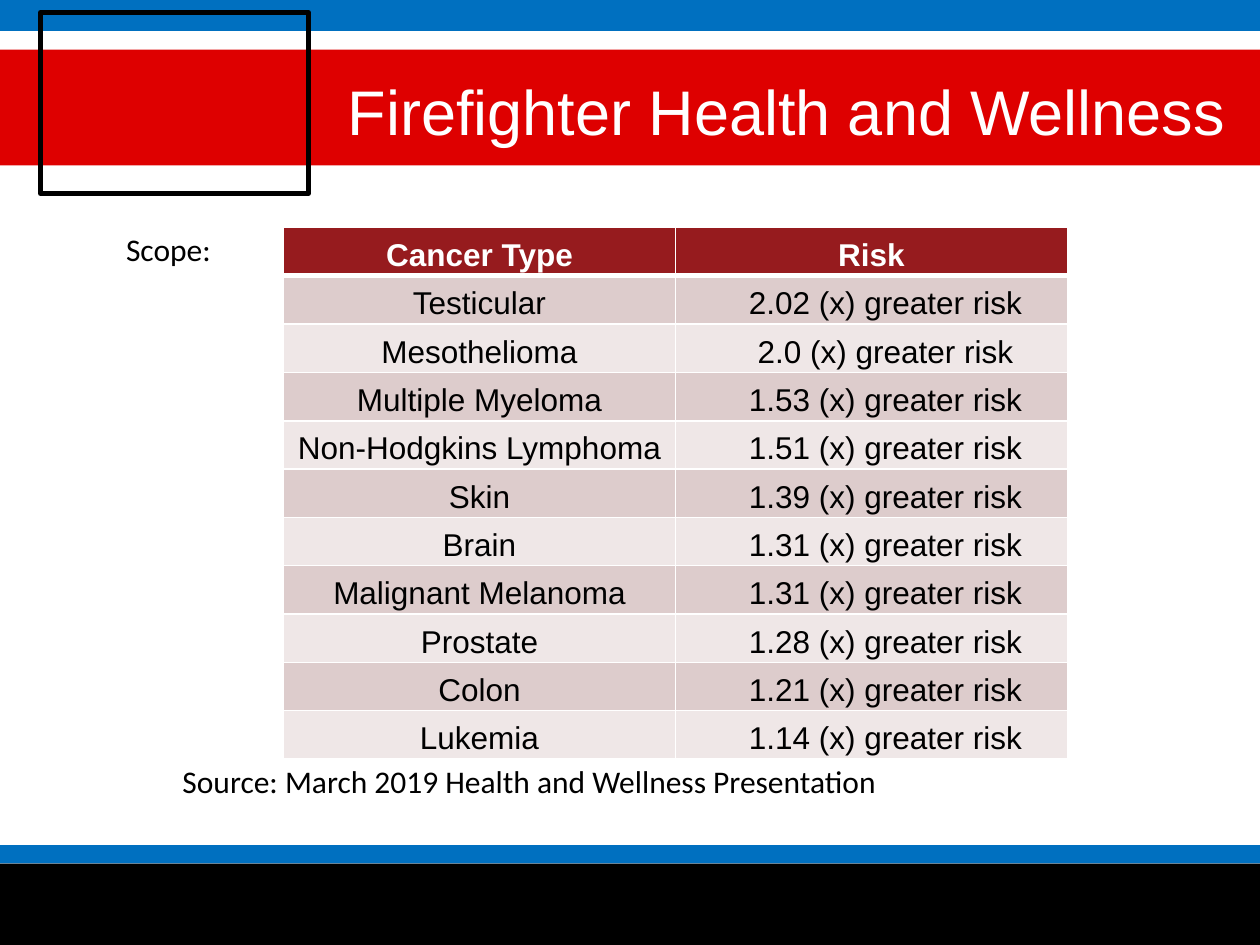
from lxml import etree
from pptx import Presentation
from pptx.dml.color import RGBColor
from pptx.enum.shapes import MSO_SHAPE
from pptx.enum.text import MSO_ANCHOR, PP_ALIGN
from pptx.oxml.ns import qn
from pptx.util import Pt

RECTANGLE = MSO_SHAPE.RECTANGLE
TOP = MSO_ANCHOR.TOP
LEFT = PP_ALIGN.LEFT
CENTER = PP_ALIGN.CENTER

SLIDE_WIDTH, SLIDE_HEIGHT = 720, 540
COLORS = {
    "red": "DE0000",
    "blue": "0070C0",
    "black": "000000",
    "white": "FFFFFF",
    "header": "961B1E",
    "odd_row": "DDCCCC",
    "even_row": "EFE7E7",
}
RISKS = [
    ("Testicular", "2.02"),
    ("Mesothelioma", "2.0"),
    ("Multiple Myeloma", "1.53"),
    ("Non-Hodgkins Lymphoma", "1.51"),
    ("Skin", "1.39"),
    ("Brain", "1.31"),
    ("Malignant Melanoma", "1.31"),
    ("Prostate", "1.28"),
    ("Colon", "1.21"),
    ("Lukemia", "1.14"),
]


class SlideBuilder:
    text_size = 18
    body_font = "Calibri"
    heading_font = "Arial"

    def __init__(self, slide):
        self.slide = slide

    def color(self, name):
        return RGBColor.from_string(COLORS[name])

    def rectangle(self, left, top, width, height):
        shape = self.slide.shapes.add_shape(
            RECTANGLE, Pt(left), Pt(top), Pt(width), Pt(height))
        shape.shadow.inherit = False
        return shape

    def band(self, top, height, color):
        shape = self.rectangle(0, top, SLIDE_WIDTH, height)
        shape.fill.solid()
        shape.fill.fore_color.rgb = self.color(color)
        shape.line.fill.background()

    def frame(self, left, top, width, height):
        shape = self.rectangle(left, top, width, height)
        shape.fill.background()
        shape.line.color.rgb = self.color("black")
        shape.line.width = Pt(3)

    def format_text(self, text_frame, text, size, font, color, bold=False, alignment=LEFT):
        text_frame.text = text
        paragraph = text_frame.paragraphs[0]
        paragraph.alignment = alignment
        for run in paragraph.runs:
            run.font.size = Pt(size)
            run.font.name = font
            run.font.bold = bold
            run.font.color.rgb = self.color(color)

    def text(self, text, left, top, width, height, size=text_size,
             font=body_font, color="black", margins=(0, 2, 0, 0)):
        shape = self.slide.shapes.add_textbox(Pt(left), Pt(top), Pt(width), Pt(height))
        frame = shape.text_frame
        frame.word_wrap = True
        frame.vertical_anchor = TOP
        frame.margin_left, frame.margin_top, frame.margin_right, frame.margin_bottom = map(Pt, margins)
        self.format_text(frame, text, size, font, color)

    def borders(self, cell, top, bottom):
        properties = cell._tc.get_or_add_tcPr()
        for side, width in (("L", 1), ("R", 1), ("T", top), ("B", bottom)):
            line = etree.SubElement(properties, qn(f"a:ln{side}"), w=str(Pt(width)))
            fill = etree.SubElement(line, qn("a:solidFill"))
            etree.SubElement(fill, qn("a:srgbClr"), val=COLORS["white"])

    def cell(self, cell, text, fill, color, bold, alignment, indent, top, bottom):
        self.borders(cell, top, bottom)
        cell.fill.solid()
        cell.fill.fore_color.rgb = self.color(fill)
        cell.margin_left, cell.margin_top = Pt(indent), Pt(6)
        cell.margin_right = cell.margin_bottom = 0
        cell.vertical_anchor = TOP
        self.format_text(cell.text_frame, text, self.text_size,
                         self.heading_font, color, bold, alignment)

    def risk_table(self, left, top, column_width, row_height):
        row_count = len(RISKS) + 1
        table = self.slide.shapes.add_table(
            row_count, 2, Pt(left), Pt(top),
            Pt(2 * column_width), Pt(row_count * row_height)).table
        for column in table.columns:
            column.width = Pt(column_width)
        for row in table.rows:
            row.height = Pt(row_height)
        for index, heading in enumerate(("Cancer Type", "Risk")):
            self.cell(table.cell(0, index), heading, "header", "white", True, CENTER, 0, 1, 3)
        for index, (cancer, factor) in enumerate(RISKS, start=1):
            fill = "odd_row" if index % 2 else "even_row"
            border = 3 if index == 1 else 1
            indent = 42 if len(factor) == 4 else 47
            self.cell(table.cell(index, 0), cancer, fill, "black", False, CENTER, 0, border, 1)
            self.cell(table.cell(index, 1), f"{factor} (x) greater risk",
                      fill, "black", False, LEFT, indent, border, 1)


def main():
    presentation = Presentation()
    presentation.slide_width = Pt(SLIDE_WIDTH)
    presentation.slide_height = Pt(SLIDE_HEIGHT)
    builder = SlideBuilder(presentation.slides.add_slide(presentation.slide_layouts[6]))

    builder.band(28.3, 66.2, "red")
    builder.band(0, 17.7, "blue")
    builder.band(483, 10.5, "blue")
    builder.band(493.5, 46.5, "black")
    builder.frame(23.2, 7.2, 153, 103.4)
    builder.text("Firefighter Health and Wellness", 0, 39.6, SLIDE_WIDTH, 45.4,
                 size=36, font="Arial", color="white", margins=(198.7, 2, 0, 0))
    builder.text("Scope:", 72, 129.6, 51, 24)
    builder.risk_table(162, 130, 224, 27)
    builder.text("Source: March 2019 Health and Wellness Presentation",
                 97.2, 432, 648, 29, margins=(7.2, 3.6, 7.2, 3.6))

    presentation.save("out.pptx")


if __name__ == "__main__":
    main()
